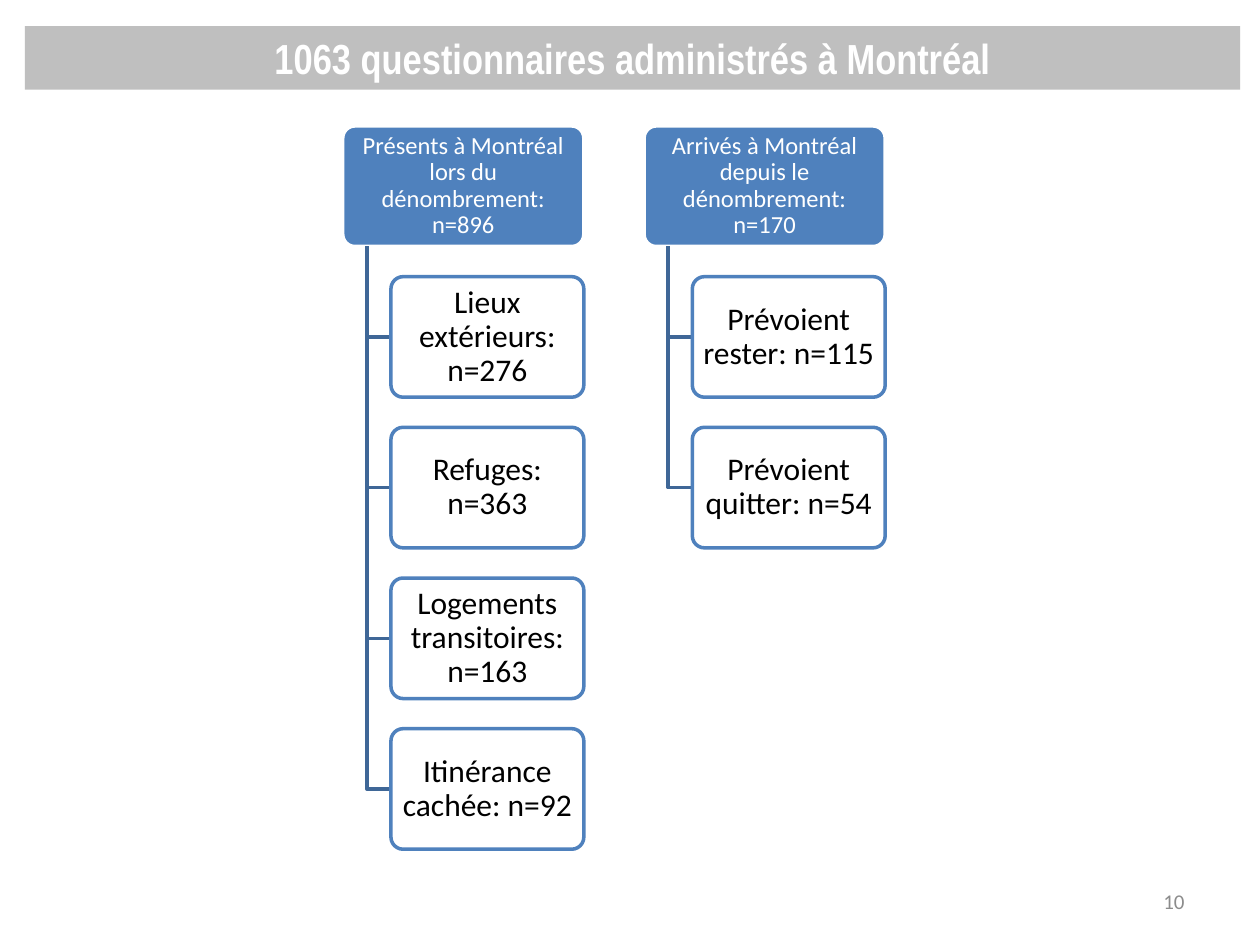
from dataclasses import dataclass

from lxml.etree import SubElement
from pptx import Presentation
from pptx.dml.color import RGBColor
from pptx.enum.shapes import MSO_SHAPE
from pptx.enum.text import MSO_ANCHOR, PP_ALIGN
from pptx.oxml.ns import qn
from pptx.util import Cm, Pt


@dataclass(frozen=True)
class Theme:
    body_font: str = "Calibri"
    title_font: str = "Arial Narrow"
    title_size: Pt = Pt(24)
    parent_size: Pt = Pt(14)
    child_size: Pt = Pt(18)
    number_size: Pt = Pt(12)
    line_width: Pt = Pt(2)
    white: RGBColor = RGBColor(0xFF, 0xFF, 0xFF)
    black: RGBColor = RGBColor(0, 0, 0)
    blue: RGBColor = RGBColor(0x4F, 0x81, 0xBD)
    dark_blue: RGBColor = RGBColor(0x3F, 0x67, 0x97)
    banner: RGBColor = RGBColor(0xBF, 0xBF, 0xBF)
    number: RGBColor = RGBColor(0x8C, 0x8C, 0x8C)


THEME = Theme()

BRANCHES = [
    ("Présents à Montréal lors du dénombrement: n=896",
     ["Lieux extérieurs: n=276", "Refuges: n=363",
      "Logements transitoires: n=163", "Itinérance cachée: n=92"]),
    ("Arrivés à Montréal depuis le dénombrement: n=170",
     ["Prévoient rester: n=115", "Prévoient quitter: n=54"]),
]

# All distances in the hierarchy follow from the box height.
TREE_LEFT, TREE_TOP = Cm(6.91), Cm(2.54)
BOX_HEIGHT = Cm(2.43)
PARENT_WIDTH = 2 * BOX_HEIGHT
CHILD_WIDTH = int(PARENT_WIDTH * 0.8)
CHILD_INDENT = PARENT_WIDTH - CHILD_WIDTH
ROW_STEP = int(BOX_HEIGHT * 1.25)
COLUMN_STEP = int(BOX_HEIGHT * 2.5)


def write_text(shape, text, size, color, font=THEME.body_font,
               alignment=PP_ALIGN.CENTER, anchor=MSO_ANCHOR.MIDDLE):
    frame = shape.text_frame
    frame.word_wrap = True
    frame.vertical_anchor = anchor
    paragraph = frame.paragraphs[0]
    paragraph.text = text
    paragraph.alignment = alignment
    paragraph.font.name = font
    paragraph.font.size = size
    paragraph.font.color.rgb = color
    return paragraph


def set_opacity(shape, percent):
    color = shape.fill._xPr.find(qn("a:solidFill"))[0]
    SubElement(color, qn("a:alpha")).set("val", str(percent * 1000))


def add_title(slide, text):
    shape = slide.shapes.add_shape(
        MSO_SHAPE.RECTANGLE, Cm(0.5), Cm(0.53), Cm(24.5), Cm(1.28))
    shape.shadow.inherit = False
    shape.fill.solid()
    shape.fill.fore_color.rgb = THEME.banner
    shape.line.fill.background()
    paragraph = write_text(shape, text, THEME.title_size, THEME.white,
                           font=THEME.title_font, anchor=MSO_ANCHOR.TOP)
    paragraph.font.bold = True


def add_box(slide, text, left, top, width, size, fill, line, text_color, inset):
    shape = slide.shapes.add_shape(
        MSO_SHAPE.ROUNDED_RECTANGLE, left, top, width, BOX_HEIGHT)
    shape.adjustments[0] = 0.1
    shape.shadow.inherit = False
    shape.fill.solid()
    shape.fill.fore_color.rgb = fill
    shape.line.color.rgb = line
    shape.line.width = THEME.line_width
    frame = shape.text_frame
    frame.margin_left = frame.margin_right = inset
    frame.margin_top = frame.margin_bottom = int(inset * 0.7)
    paragraph = write_text(shape, text, size, text_color)
    paragraph.line_spacing = 0.9
    return shape


def add_elbow(slide, left, top, right, bottom):
    """Draw a line straight down from (left, top), then across to the right."""
    builder = slide.shapes.build_freeform(left, top)
    builder.add_line_segments([(left, bottom), (right, bottom)], close=False)
    elbow = builder.convert_to_shape()
    elbow.shadow.inherit = False
    elbow.fill.background()
    elbow.line.color.rgb = THEME.dark_blue
    elbow.line.width = THEME.line_width


def add_branch(slide, left, parent, children):
    add_box(slide, parent, left, TREE_TOP, PARENT_WIDTH, THEME.parent_size,
            THEME.blue, THEME.white, THEME.white, Cm(0.08))
    child_left = left + CHILD_INDENT
    for row, child in enumerate(children, start=1):
        child_top = TREE_TOP + row * ROW_STEP
        add_elbow(slide, left + CHILD_INDENT // 2, TREE_TOP + BOX_HEIGHT,
                  child_left, child_top + BOX_HEIGHT // 2)
        box = add_box(slide, child, child_left, child_top, CHILD_WIDTH,
                      THEME.child_size, THEME.white, THEME.blue, THEME.black,
                      Cm(0.1))
        set_opacity(box, 90)


def add_slide_number(slide, number):
    box = slide.shapes.add_textbox(Cm(18.2), Cm(17.66), Cm(5.93), Cm(1.01))
    write_text(box, number, THEME.number_size, THEME.number,
               alignment=PP_ALIGN.RIGHT)


def main():
    presentation = Presentation()
    presentation.slide_width = Cm(25.4)
    presentation.slide_height = Cm(19.05)
    slide = presentation.slides.add_slide(presentation.slide_layouts[6])
    add_slide_number(slide, "10")
    add_title(slide, "1063 questionnaires administrés à Montréal")
    for column, (parent, children) in enumerate(BRANCHES):
        add_branch(slide, TREE_LEFT + column * COLUMN_STEP, parent, children)
    presentation.save("out.pptx")


if __name__ == "__main__":
    main()
